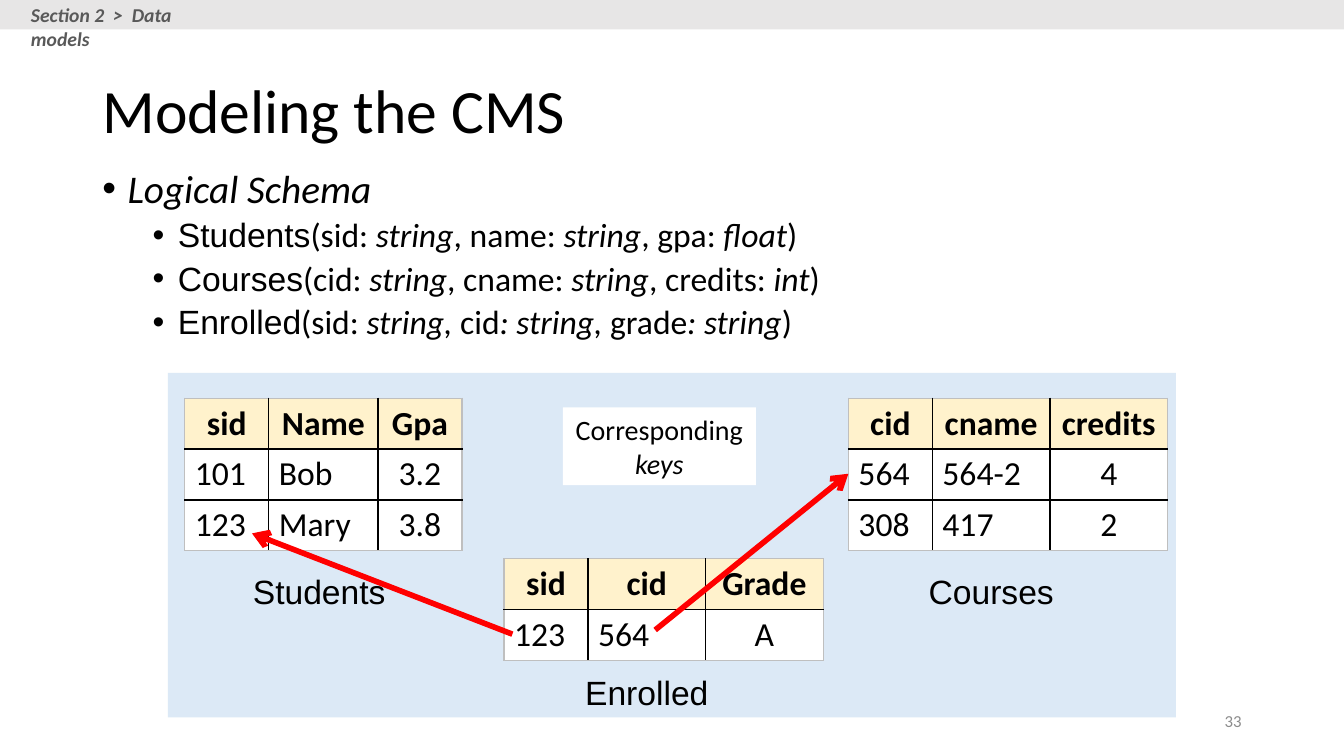
"""Build the slide on the logical schema of a course management system."""
from dataclasses import dataclass
from typing import Iterable, Optional

from lxml.etree import SubElement
from pptx import Presentation
from pptx.dml.color import RGBColor
from pptx.enum.shapes import MSO_CONNECTOR as Connector, MSO_SHAPE as Preset
from pptx.enum.text import MSO_ANCHOR as Anchor, PP_ALIGN as Align
from pptx.oxml.ns import qn
from pptx.util import Emu, Inches, Pt

COLUMNS, ROWS = 160, 90
WIDTH, HEIGHT = Inches(13.33), Inches(7.5)
BLACK, WHITE, CREAM, GREY, RED = "000000", "FFFFFF", "FFF2CC", "BFBFBF", "FF0000"
ROW_HEIGHT = 6.06


@dataclass(frozen=True)
class Area:
    """A rectangle in grid columns and rows."""
    left: float
    top: float
    width: float
    height: float


@dataclass(frozen=True)
class Span:
    """A run of text with its look."""
    text: str
    size: float = 24
    font: str = "Calibri"
    color: str = BLACK
    bold: bool = False
    italic: bool = False


@dataclass(frozen=True)
class Relation:
    """A table with its caption."""
    name: str
    left: float
    top: float
    widths: tuple[float, ...]
    records: tuple[tuple[str, ...], ...]
    caption_left: float
    caption_top: float


@dataclass(frozen=True)
class Arrow:
    """A key reference between two grid points."""
    start: tuple[float, float]
    end: tuple[float, float]


@dataclass(frozen=True)
class Schema:
    """A relation name and its signature, plain and italic pieces in turn."""
    name: str
    signature: tuple[str, ...]


SCHEMAS = (
    Schema("Students", ("(sid: ", "string", ", name: ", "string", ", gpa: ", "float", ")")),
    Schema("Courses", ("(cid: ", "string", ", cname: ", "string", ", credits: ", "int", ")")),
    Schema("Enrolled", ("(sid: ", "string, ", "cid", ": string, ", "grade", ": string", ")")),
)
RELATIONS = (
    Relation("Students", 22, 47.4, (10, 13, 10),
             (("sid", "Name", "Gpa"), ("101", "Bob", "3.2"), ("123", "Mary", "3.8")), 27, 67.4),
    Relation("Courses", 101, 47.4, (10, 14, 14),
             (("cid", "cname", "credits"), ("564", "564-2", "4"), ("308", "417", "2")), 107, 67.4),
    Relation("Enrolled", 60, 66.5, (10, 14, 14),
             (("sid", "cid", "Grade"), ("123", "564", "A")), 66, 79.4),
)
ARROWS = (Arrow((61, 75.5), (30, 63.5)), Arrow((78, 75), (101, 56.4)))


def x(columns: float) -> Emu:
    """Turn grid columns into a length."""
    return Emu(round(WIDTH * columns / COLUMNS))


def y(rows: float) -> Emu:
    """Turn grid rows into a length."""
    return Emu(round(HEIGHT * rows / ROWS))


def place(area: Area) -> tuple[Emu, Emu, Emu, Emu]:
    """Turn an area into left, top, width and height."""
    return x(area.left), y(area.top), x(area.width), y(area.height)


def paint(target, color: str) -> None:
    """Give a shape, cell, line or font one solid colour."""
    target.fill.solid()
    target.fill.fore_color.rgb = RGBColor.from_string(color)


def write(para, spans: Iterable[Span], align=Align.LEFT) -> None:
    """Add the spans to a paragraph."""
    para.alignment = align
    for span in spans:
        run = para.add_run()
        run.text = span.text
        font = run.font
        font.name, font.size = span.font, Pt(span.size)
        font.bold, font.italic = span.bold, span.italic
        paint(font, span.color)


def add_text(page, area: Area, spans: Iterable[Span], align=Align.LEFT, anchor=Anchor.TOP):
    """Add a wrapping text box and return its frame."""
    frame = page.shapes.add_textbox(*place(area)).text_frame
    frame.word_wrap = True
    frame.vertical_anchor = anchor
    write(frame.paragraphs[0], spans, align)
    return frame


def add_panel(page, area: Area, color: str, opacity: Optional[int] = None):
    """Add a plain rectangle, see-through if an opacity in percent is given."""
    panel = page.shapes.add_shape(Preset.RECTANGLE, *place(area))
    panel.shadow.inherit = False
    panel.line.fill.background()
    paint(panel, color)
    if opacity is not None:
        tone = panel._element.spPr.find(".//" + qn("a:srgbClr"))
        SubElement(tone, qn("a:alpha"), val=str(opacity * 1000))
    return panel


def add_bullet(para, margin: float, before: float) -> None:
    """Give a paragraph a hanging bullet."""
    para.line_spacing, para.space_before = 0.9, Pt(before)
    props = para._p.get_or_add_pPr()
    props.set("marL", str(Inches(margin)))
    props.set("indent", str(Inches(-0.25)))
    SubElement(props, qn("a:buFont"), typeface="Arial")
    SubElement(props, qn("a:buChar"), char="•")


def add_border(cell, side: str, color: str) -> None:
    """Draw one side of a cell."""
    line = SubElement(cell._tc.get_or_add_tcPr(), qn(f"a:ln{side}"), w=str(Pt(1)))
    SubElement(SubElement(line, qn("a:solidFill")), qn("a:srgbClr"), val=color)


def add_relation(page, relation: Relation) -> None:
    """Add a table and the caption below it."""
    count, last = len(relation.records), len(relation.widths) - 1
    area = Area(relation.left, relation.top, sum(relation.widths), ROW_HEIGHT * count)
    table = page.shapes.add_table(count, last + 1, *place(area)).table
    table.horz_banding = False
    for column, width in zip(table.columns, relation.widths):
        column.width = x(width)
    for row, record in enumerate(relation.records):
        table.rows[row].height = y(ROW_HEIGHT)
        for index, value in enumerate(record):
            cell = table.cell(row, index)
            outer = {"L": index == 0, "R": index == last, "T": row == 0, "B": row == count - 1}
            for side, is_outer in outer.items():
                add_border(cell, side, GREY if is_outer else BLACK)
            header = row == 0
            paint(cell, CREAM if header else WHITE)
            align = Align.CENTER if header or index == last else Align.LEFT
            write(cell.text_frame.paragraphs[0], [Span(value, bold=header)], align)
    caption = Area(relation.caption_left, relation.caption_top, 22, 6)
    add_text(page, caption, [Span(relation.name, font="Arial")], Align.CENTER)


def add_arrow(page, arrow: Arrow) -> None:
    """Add a red arrow."""
    (left, top), (right, bottom) = arrow.start, arrow.end
    link = page.shapes.add_connector(Connector.STRAIGHT, x(left), y(top), x(right), y(bottom))
    link.line.width = Pt(4)
    paint(link.line, RED)
    SubElement(link._element.spPr.find(qn("a:ln")), qn("a:tailEnd"), type="arrow")
    SubElement(link._element.spPr, qn("a:effectLst"))


def main() -> None:
    """Build and save the deck."""
    deck = Presentation()
    deck.slide_width, deck.slide_height = WIDTH, HEIGHT
    page = deck.slides.add_slide(deck.slide_layouts[6])

    add_panel(page, Area(20, 44.4, 120, 41), "5B9BD5", 21)
    title = add_text(page, Area(11, 4.8, 138, 17.4), [Span("Modeling the CMS", 44)],
                     anchor=Anchor.MIDDLE)
    title.paragraphs[0].line_spacing = 0.9
    body = add_text(page, Area(11, 19.6, 108, 24), [Span("Logical Schema", 28, italic=True)])
    add_bullet(body.paragraphs[0], 0.25, 10)
    for schema in SCHEMAS:
        para = body.add_paragraph()
        para.level = 1
        spans = [Span(text, italic=index % 2 == 1) for index, text in enumerate(schema.signature)]
        write(para, [Span(schema.name, font="Arial"), *spans])
        add_bullet(para, 0.75, 5)

    for relation in RELATIONS:
        add_relation(page, relation)
    for arrow in ARROWS:
        add_arrow(page, arrow)
    add_text(page, Area(113, 83.4, 36, 4.8), [Span("33", 12, color="8C8C8C")],
             Align.RIGHT, Anchor.MIDDLE)

    frame = add_panel(page, Area(67, 48.5, 23, 9.25), WHITE).text_frame
    frame.word_wrap = True
    write(frame.paragraphs[0], [Span("Corresponding ", 20), Span("keys", 20, italic=True)],
          Align.CENTER)
    add_panel(page, Area(0, 0, COLUMNS, 3.5), "E7E6E6")
    add_text(page, Area(2.5, -0.2, 26.2, 4.1),
             [Span("Section 2  >  Data models", 14, color="595959", bold=True, italic=True)])
    deck.save("out.pptx")


if __name__ == "__main__":
    main()
